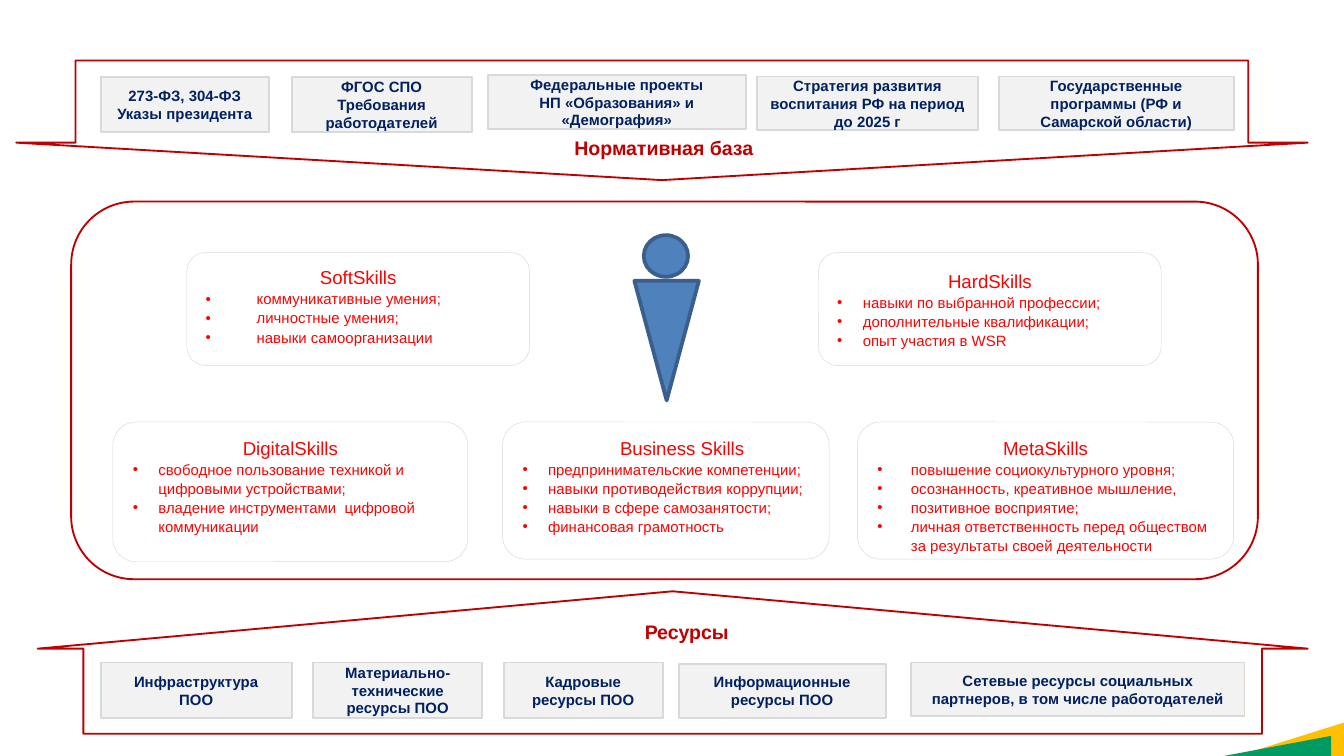
from dataclasses import dataclass

from lxml import etree
from pptx import Presentation
from pptx.dml.color import RGBColor
from pptx.enum.shapes import MSO_SHAPE
from pptx.enum.text import MSO_ANCHOR, PP_ALIGN
from pptx.oxml.ns import qn
from pptx.util import Inches, Pt

ROUNDED = MSO_SHAPE.ROUNDED_RECTANGLE
OVAL = MSO_SHAPE.OVAL
TRIANGLE = MSO_SHAPE.ISOSCELES_TRIANGLE
CORNER = MSO_SHAPE.RIGHT_TRIANGLE
DOWN_ARROW = MSO_SHAPE.DOWN_ARROW
UP_ARROW = MSO_SHAPE.UP_ARROW
TOP = MSO_ANCHOR.TOP
MIDDLE = MSO_ANCHOR.MIDDLE
CENTER = PP_ALIGN.CENTER
LEFT = PP_ALIGN.LEFT


@dataclass(frozen=True)
class Theme:
    font: str = "Arial"
    navy: str = "002060"
    dark_red: str = "C00000"
    red: str = "FF0000"
    white: str = "FFFFFF"
    pale_gray: str = "F2F2F2"
    gray: str = "D9D9D9"
    blue: str = "4F81BD"
    dark_blue: str = "3A5F8C"
    yellow: str = "FFC000"
    green: str = "009B62"
    label_size: float = 10.5
    heading_size: float = 10
    body_size: float = 8


THEME = Theme()

REGULATIONS = [
    ((0.75, 0.57, 1.25, 0.41), ["273-ФЗ, 304-ФЗ", "Указы президента"]),
    ((2.17, 0.57, 1.34, 0.41), ["ФГОС СПО", "Требования работодателей"]),
    ((3.63, 0.56, 1.92, 0.4), ["Федеральные проекты", "НП «Образования» и «Демография»"]),
    ((5.63, 0.57, 1.65, 0.4), ["Стратегия развития воспитания РФ на период до 2025 г"]),
    ((7.43, 0.57, 1.75, 0.4), ["Государственные программы (РФ и", "Самарской области)"]),
]
RESOURCES = [
    ((0.75, 4.93, 1.42, 0.41), ["Инфраструктура", "ПОО"]),
    ((2.33, 4.93, 1.26, 0.41), ["Материально-технические ресурсы ПОО"]),
    ((3.75, 4.93, 1.18, 0.41), ["Кадровые ресурсы ПОО"]),
    ((5.05, 4.94, 1.54, 0.4), ["Информационные ресурсы ПОО"]),
    ((6.78, 4.93, 2.48, 0.4),
     ["Сетевые ресурсы социальных партнеров, в том числе работодателей"]),
]
SKILLS = [
    ((6.09, 1.88, 2.55, 0.84), MIDDLE, 0, 0.19, "HardSkills",
     ["навыки по выбранной профессии;", "дополнительные квалификации;",
      "опыт участия в WSR"]),
    ((1.39, 1.88, 2.55, 0.84), TOP, 0, 0.38, "SoftSkills",
     ["коммуникативные умения;", "личностные умения;", "навыки самоорганизации"]),
    ((6.38, 3.14, 2.8, 1.02), TOP, 0, 0.25, "MetaSkills",
     ["повышение социокультурного уровня;", "осознанность, креативное мышление,",
      "позитивное восприятие;",
      "личная ответственность перед обществом за результаты своей деятельности"]),
    ((0.84, 3.14, 2.64, 1.04), TOP, 0, 0.19, "DigitalSkills",
     ["свободное пользование техникой и цифровыми устройствами;",
      "владение инструментами  цифровой коммуникации"]),
    ((3.74, 3.14, 2.43, 1.02), TOP, 0.24, 0.19, "Business Skills",
     ["предпринимательские компетенции;", "навыки противодействия коррупции;",
      "навыки в сфере самозанятости;", "финансовая грамотность"]),
]


def color(value):
    return RGBColor.from_string(value)


def add_shape(shapes, kind, box, fill=None, line=None, width=1.0, rotation=0, adjustments=()):
    shape = shapes.add_shape(kind, *map(Inches, box))
    shape.shadow.inherit = False
    shape.rotation = rotation
    for index, value in enumerate(adjustments):
        shape.adjustments[index] = value
    if fill:
        shape.fill.solid()
        shape.fill.fore_color.rgb = color(fill)
    else:
        shape.fill.background()
    if line:
        shape.line.color.rgb = color(line)
        shape.line.width = Pt(width)
    else:
        shape.line.fill.background()
    return shape


def next_paragraph(frame, index):
    return frame.add_paragraph() if index else frame.paragraphs[0]


def format_paragraph(paragraph, text, size, text_color, bold=False, alignment=CENTER):
    paragraph.text = text
    paragraph.alignment = alignment
    paragraph.font.name = THEME.font
    paragraph.font.size = Pt(size)
    paragraph.font.bold = bold
    paragraph.font.color.rgb = color(text_color)


def set_indent(paragraph, margin, bullet=False):
    properties = paragraph._p.get_or_add_pPr()
    properties.set("marL", str(Inches(margin)))
    if bullet:
        properties.set("indent", str(-Inches(margin)))
        etree.SubElement(properties, qn("a:buFont")).set("typeface", THEME.font)
        etree.SubElement(properties, qn("a:buChar")).set("char", "•")


def add_label_boxes(shapes, boxes):
    for box, lines in boxes:
        shape = add_shape(shapes, ROUNDED, box, THEME.pale_gray, THEME.gray, adjustments=[0])
        frame = shape.text_frame
        frame.word_wrap = True
        frame.vertical_anchor = MIDDLE
        frame.margin_left = frame.margin_right = Inches(0.09)
        for index, text in enumerate(lines):
            format_paragraph(next_paragraph(frame, index), text,
                             THEME.body_size, THEME.navy, bold=True)


def add_skill_card(shapes, box, anchor, heading_indent, bullet_indent, heading, items):
    frame = add_shape(shapes, ROUNDED, box, line=THEME.gray, width=0.25).text_frame
    frame.word_wrap = True
    frame.vertical_anchor = anchor
    for index, text in enumerate([heading, *items]):
        paragraph = next_paragraph(frame, index)
        if index:
            set_indent(paragraph, bullet_indent, bullet=True)
            format_paragraph(paragraph, text, THEME.body_size, THEME.red, alignment=LEFT)
        else:
            set_indent(paragraph, heading_indent)
            format_paragraph(paragraph, text, THEME.heading_size, THEME.red)
        paragraph.line_spacing = 1.07


def add_label(shapes, left, top, text):
    frame = shapes.add_textbox(*map(Inches, (left, top, 2.3, 0.29))).text_frame
    frame.word_wrap = True
    format_paragraph(frame.paragraphs[0], text, THEME.label_size, THEME.dark_red, bold=True)


def add_person(shapes):
    style = {"fill": THEME.blue, "line": THEME.dark_blue, "width": 2}
    add_shape(shapes, OVAL, (4.79, 1.75, 0.33, 0.31), **style)
    add_shape(shapes, TRIANGLE, (4.72, 2.09, 0.48, 0.89), rotation=180, **style)


def add_skill_panel(shapes):
    panel = shapes.add_group_shape().shapes
    add_shape(panel, ROUNDED, (0.53, 1.5, 8.83, 2.81), THEME.white, THEME.dark_red)
    add_person(panel)
    for card in SKILLS:
        add_skill_card(panel, *card)


def main():
    presentation = Presentation()
    presentation.slide_width = Inches(10)
    presentation.slide_height = Inches(10) * 9 // 16
    slide = presentation.slides.add_slide(presentation.slide_layouts[6])
    shapes = slide.shapes

    add_shape(shapes, CORNER, (9.46, 5.09, 0.26, 0.83), THEME.yellow, rotation=270)
    add_shape(shapes, CORNER, (9.43, 5.15, 0.15, 0.8), THEME.green, rotation=270)
    add_shape(shapes, DOWN_ARROW, (0.12, 0.45, 9.61, 0.89), line=THEME.dark_red,
              adjustments=[0.908, 0.313])
    add_label_boxes(shapes, REGULATIONS)
    add_shape(shapes, UP_ARROW, (0.28, 4.4, 9.45, 1.06), line=THEME.dark_red,
              adjustments=[0.928, 0.403])
    add_label_boxes(shapes, RESOURCES)
    add_skill_panel(shapes)
    add_label(shapes, 3.79, 0.96, "Нормативная база")
    add_label(shapes, 3.96, 4.56, "Ресурсы")

    presentation.save("out.pptx")


if __name__ == "__main__":
    main()
